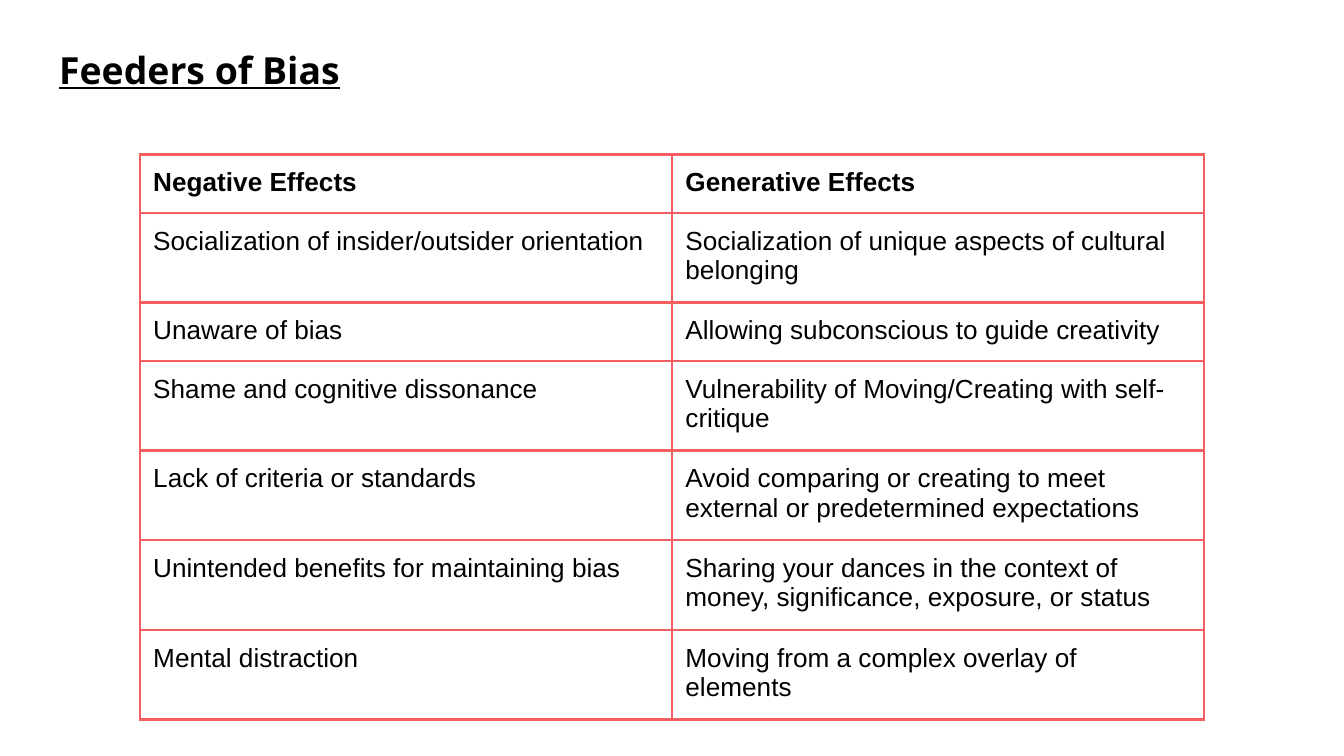
from dataclasses import dataclass

from lxml import etree
from pptx import Presentation
from pptx.dml.color import RGBColor
from pptx.enum import text
from pptx.oxml import ns
from pptx.util import Inches, Pt


@dataclass(frozen=True)
class Theme:
    """Hold the colours, fonts and sizes."""

    ink: str = "000000"
    paper: str = "FFFFFF"
    rule: str = "F55E61"
    heading_font: str = "Open Sans"
    body_font: str = "Arial"
    heading_size: int = 20
    body_size: int = 14
    rule_width: float = 1.5
    inset: float = 0.1


EFFECTS = [
    ("Negative Effects", "Generative Effects"),
    ("Socialization of insider/outsider orientation",
     "Socialization of unique aspects of cultural belonging"),
    ("Unaware of bias", "Allowing subconscious to guide creativity"),
    ("Shame and cognitive dissonance",
     "Vulnerability of Moving/Creating with self-critique"),
    ("Lack of criteria or standards",
     "Avoid comparing or creating to meet external or predetermined expectations"),
    ("Unintended benefits for maintaining bias",
     "Sharing your dances in the context of money, significance, exposure, or status"),
    ("Mental distraction", "Moving from a complex overlay of elements"),
]


def write(frame, words, *, font, size, color, bold=False, underline=False):
    """Put one left-aligned, formatted run into a text frame."""
    paragraph = frame.paragraphs[0]
    paragraph.alignment = text.PP_ALIGN.LEFT
    run = paragraph.add_run()
    run.text = words
    run.font.name = font
    run.font.size = Pt(size)
    run.font.bold = bold
    run.font.underline = underline
    run.font.color.rgb = RGBColor.from_string(color)


class SlideBuilder:
    """Draw styled elements on the current slide."""

    def __init__(self, slide, theme):
        """Keep the slide and its theme."""
        self.slide = slide
        self.theme = theme

    def inset(self, holder):
        """Give a frame or cell equal margins and top anchoring."""
        for side in ("left", "right", "top", "bottom"):
            setattr(holder, f"margin_{side}", Inches(self.theme.inset))
        holder.vertical_anchor = text.MSO_ANCHOR.TOP

    def title(self, words, left, top, width, height):
        """Place and fill the title placeholder."""
        heading = self.slide.shapes.title
        heading.left, heading.top = Inches(left), Inches(top)
        heading.width, heading.height = Inches(width), Inches(height)
        frame = heading.text_frame
        frame.word_wrap = True
        frame.auto_size = text.MSO_AUTO_SIZE.SHAPE_TO_FIT_TEXT
        self.inset(frame)
        write(frame, words, font=self.theme.heading_font,
              size=self.theme.heading_size, color=self.theme.ink,
              bold=True, underline=True)

    def outline(self, cell):
        """Rule all four sides of a cell."""
        properties = cell._tc.get_or_add_tcPr()
        for place, side in enumerate(("lnL", "lnR", "lnT", "lnB")):
            line = etree.Element(ns.qn(f"a:{side}"), w=str(Pt(self.theme.rule_width)))
            fill = etree.SubElement(line, ns.qn("a:solidFill"))
            etree.SubElement(fill, ns.qn("a:srgbClr"), val=self.theme.rule)
            properties.insert(place, line)

    def table(self, rows, left, top, column_width, row_height):
        """Add a ruled table whose first row is bold."""
        columns = len(rows[0])
        grid = self.slide.shapes.add_table(
            len(rows), columns, Inches(left), Inches(top),
            Inches(column_width * columns), Inches(row_height * len(rows))).table
        grid.horz_banding = False
        for column in grid.columns:
            column.width = Inches(column_width)
        for row_index, row in enumerate(rows):
            grid.rows[row_index].height = Inches(row_height)
            for column_index, words in enumerate(row):
                cell = grid.cell(row_index, column_index)
                self.inset(cell)
                cell.fill.solid()
                cell.fill.fore_color.rgb = RGBColor.from_string(self.theme.paper)
                self.outline(cell)
                write(cell.text_frame, words, font=self.theme.body_font,
                      size=self.theme.body_size, color=self.theme.ink,
                      bold=row_index == 0)


def main():
    """Build and save the slide."""
    deck = Presentation()
    deck.slide_width = Inches(10)
    deck.slide_height = deck.slide_width * 9 // 16
    title_only = deck.slide_layouts.get_by_name("Title Only")
    builder = SlideBuilder(deck.slides.add_slide(title_only), Theme())
    builder.title("Feeders of Bias", 0.34, 0.25, 9.45, 0.54)
    builder.table(EFFECTS, 1.04, 1.15, column_width=3.96, row_height=0.42)
    deck.save("out.pptx")


if __name__ == "__main__":
    main()
